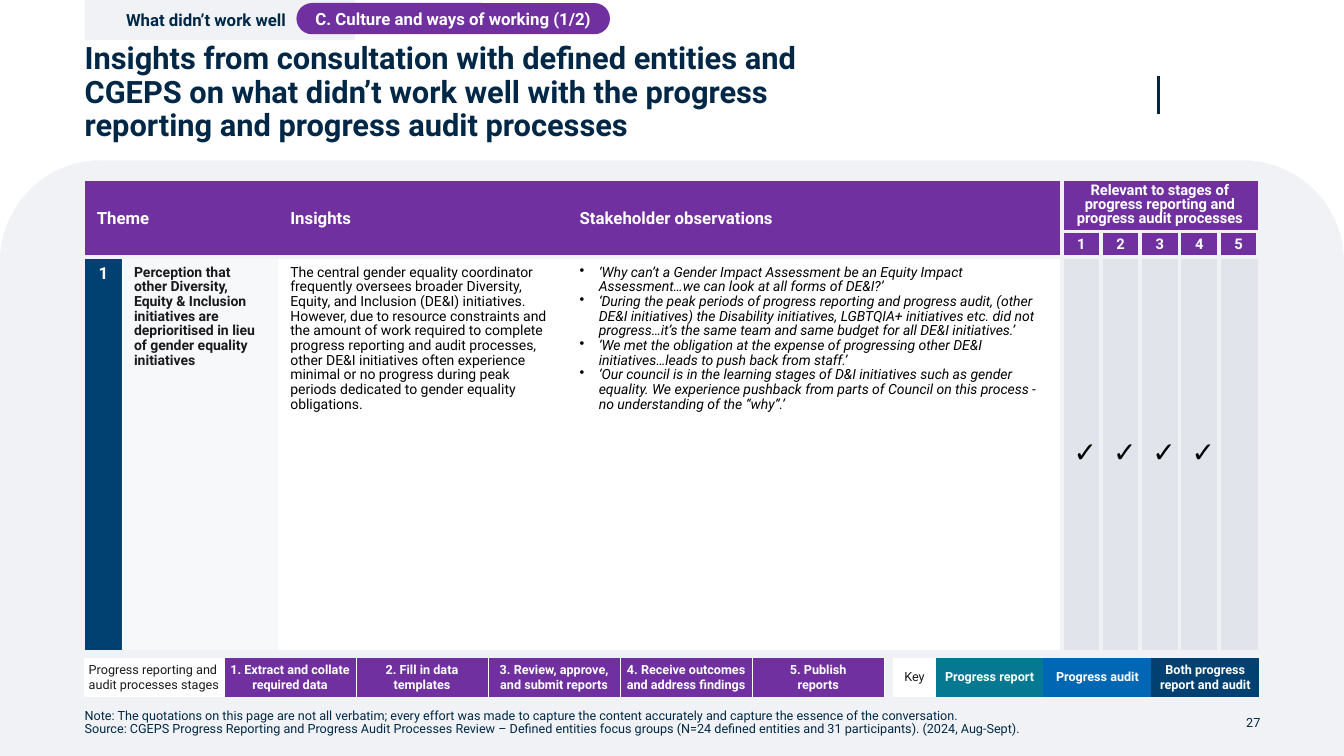
"""Build the slide on what did not work well: culture and ways of working."""
import pptx
import pptx.chart.data
import pptx.dml.color
import pptx.enum.shapes
import pptx.enum.text
import pptx.oxml
import pptx.oxml.ns
import pptx.util
from lxml import etree

Inches, Pt = pptx.util.Inches, pptx.util.Pt
Shape = pptx.enum.shapes.MSO_SHAPE
Align = pptx.enum.text.PP_ALIGN
Anchor = pptx.enum.text.MSO_ANCHOR
qn = pptx.oxml.ns.qn

NAVY, BLUE, PURPLE, PALE = "002846", "004172", "7030A0", "F0F2F5"
WHITE, DARK, BLACK, MIST = "FFFFFF", "1A1A1A", "000000", "E1E5EB"
LEFT = 0.84

TITLE = ("Insights from consultation with defined entities and CGEPS on what didn’t work well "
         "with the progress reporting and progress audit processes")
TAG = "What didn’t work well"
TOPIC = "C. Culture and ways of working (1/2)"
NOTE = ("Note: The quotations on this page are not all verbatim; every effort was made to capture "
        "the content accurately and capture the essence of the conversation.\v"
        "Source: CGEPS Progress Reporting and Progress Audit Processes Review – Defined entities "
        "focus groups (N=24 defined entities and 31 participants). (2024, Aug-Sept).")
PAGE = "27"

HEADS = [(0, "Theme"), (2, "Insights"), (3, "Stakeholder observations")]
STAGES = "Relevant to stages of progress reporting and progress audit processes"
THEME = ("Perception that other Diversity, Equity & Inclusion initiatives are deprioritised "
         "in lieu of gender equality initiatives")
INSIGHT = ("The central gender equality coordinator frequently oversees broader Diversity, Equity, "
           "and Inclusion (DE&I) initiatives. However, due to resource constraints and the amount "
           "of work required to complete progress reporting and audit processes, other DE&I "
           "initiatives often experience minimal or no progress during peak periods dedicated to "
           "gender equality obligations.")
QUOTES = "\n".join([
    "‘Why can’t a Gender Impact Assessment be an Equity Impact Assessment…we can look at all "
    "forms of DE&I?’",
    "‘During the peak periods of progress reporting and progress audit, (other DE&I initiatives) "
    "the Disability initiatives, LGBTQIA+ initiatives etc. did not progress…it’s the same team "
    "and same budget for all DE&I initiatives.’",
    "‘We met the obligation at the expense of progressing other DE&I initiatives…leads to push "
    "back from staff.’",
    "‘Our council is in the learning stages of D&I initiatives such as gender equality. We "
    "experience pushback from parts of Council on this process - no understanding of the “why”.’",
])
TICKS = ["✓", "✓", "✓", "✓", ""]

STEPS = [
    ("Progress reporting and audit processes stages", WHITE),
    ("1. Extract and collate required data", PURPLE),
    ("2. Fill in data\ntemplates", PURPLE),
    ("3. Review, approve, and submit reports", PURPLE),
    ("4. Receive outcomes and address findings", PURPLE),
    ("5. Publish\nreports", PURPLE),
]
KEYS = [("Key", WHITE), ("Progress report", "057992"), ("Progress audit", "0067B4"),
        ("Both progress report and audit", BLUE)]

MID = {"alignment": Align.CENTER}
TIGHT = {"line_spacing": 0.9}


def paint(part, hue):
    part.solid()
    part.fore_color.rgb = pptx.dml.color.RGBColor.from_string(hue)


def apply(part, looks):
    for name, value in looks.items():
        setattr(part, name, value)


def inset(side, top, anchor):
    return {"margin_left": Inches(side), "margin_right": Inches(side),
            "margin_top": Inches(top), "margin_bottom": Inches(top),
            "vertical_anchor": anchor}


def write(frame, text, size, hue, bold=False, para=None, italic=False, mark=None):
    frame.word_wrap = True
    frame.text = text
    for line in frame.paragraphs:
        if mark:
            props = line._p.get_or_add_pPr()
            props.set("marL", str(Inches(0.19)))
            props.set("indent", str(-Inches(0.19)))
            etree.SubElement(props, qn("a:buChar"), char=mark)
        apply(line, para or {})
        apply(line.font, {"size": Pt(size), "name": "Roboto", "bold": bold, "italic": italic})
        paint(line.font.fill, hue)


def edge(cell, sides, hue, width):
    props = cell._tc.get_or_add_tcPr()
    for spot, side in enumerate("LRTB"):
        line = etree.Element(qn("a:ln" + side), w=str(Pt(width)))
        if side in sides:
            fill = etree.SubElement(line, qn("a:solidFill"))
            etree.SubElement(fill, qn("a:srgbClr"), val=hue)
        else:
            etree.SubElement(line, qn("a:noFill"))
        props.insert(spot, line)


def grid(slide, left, top, cols, rows):
    frame = slide.shapes.add_table(len(rows), len(cols), Inches(left), Inches(top),
                                   Inches(sum(cols)), Inches(sum(rows)))
    table = frame.table
    apply(table, {"first_row": False, "horz_banding": False})
    for col, width in zip(table.columns, cols):
        col.width = Inches(width)
    for row, height in zip(table.rows, rows):
        row.height = Inches(height)
    return table


def shape(slide, kind, box, hue):
    item = slide.shapes.add_shape(kind, *map(Inches, box))
    item.shadow.inherit = False
    paint(item.fill, hue)
    item.line.fill.background()
    return item


def label(slide, box, text, para):
    frame = slide.shapes.add_textbox(*map(Inches, box)).text_frame
    apply(frame, inset(0, 0, Anchor.MIDDLE))
    write(frame, text, 9, NAVY, para=para)


def main_table(slide):
    table = grid(slide, LEFT, 1.8, [0.37, 1.55, 2.87, 4.9] + [0.39] * 5, [0.49, 0.24, 3.9])
    for row in range(3):
        for col in range(9):
            cell = table.cell(row, col)
            if row < 2:
                hue = PURPLE
                sides = "B" if col < 3 else "RB" if col == 3 else "LRTB" if row else "LB"
            else:
                hue = BLUE if col == 0 else WHITE if col < 4 else MIST
                sides = "T" if col < 3 else "RT" if col == 3 else "LRT" if col < 8 else "LT"
            paint(cell.fill, hue)
            edge(cell, sides, PALE, 3)
            anchor = Anchor.MIDDLE if row < 2 or col > 3 else Anchor.TOP
            apply(cell, inset(0.12, 0.04 if row < 2 else 0.08, anchor))
    for col, text in HEADS:
        last = 1 if col == 0 else col
        table.cell(0, col).merge(table.cell(1, last))
        write(table.cell(0, col).text_frame, text, 12, WHITE, True, TIGHT)
    table.cell(0, 4).merge(table.cell(0, 8))
    write(table.cell(0, 4).text_frame, STAGES, 10.5, WHITE, True,
          {**MID, "line_spacing": Pt(10)})
    for step, tick in enumerate(TICKS):
        write(table.cell(1, 4 + step).text_frame, str(step + 1), 10.5, WHITE, True,
              {**MID, **TIGHT})
        write(table.cell(2, 4 + step).text_frame, tick, 20, BLACK, False,
              {**MID, **TIGHT}, True)
    write(table.cell(2, 0).text_frame, "1", 12, WHITE, True, {**MID, **TIGHT})
    write(table.cell(2, 1).text_frame, THEME, 10, DARK, True, TIGHT)
    write(table.cell(2, 2).text_frame, INSIGHT, 10, BLACK, False, TIGHT)
    write(table.cell(2, 3).text_frame, QUOTES, 10, BLACK, False, TIGHT, True, "•")
    tint = table.cell(2, 1)._tc.tcPr.find(qn("a:solidFill"))[0]
    etree.SubElement(tint, qn("a:alpha"), val="50000")


def strip(slide, left, cols, items, sides, first):
    table = grid(slide, left, 6.53, cols, [0.38])
    for col, (text, hue) in enumerate(items):
        cell = table.cell(0, col)
        paint(cell.fill, hue)
        edge(cell, sides, WHITE, 0.5)
        apply(cell, inset(0.04, 0.04, Anchor.MIDDLE))
        write(cell.text_frame, text, 9, WHITE if col else DARK, col > 0, MID if col else first)


def main():
    deck = pptx.Presentation()
    apply(deck, {"slide_width": Inches(13.33), "slide_height": Inches(7.5)})
    slide = deck.slides.add_slide(deck.slide_layouts[5])

    panel = shape(slide, Shape.ROUND_2_SAME_RECTANGLE, (0, 1.59, 13.33, 5.91), PALE)
    panel.adjustments[0] = 0.17
    rule = slide.shapes.add_connector(pptx.enum.shapes.MSO_CONNECTOR.STRAIGHT,
                                      *map(Inches, (11.49, 0.75, 11.49, 1.13)))
    paint(rule.line.fill, NAVY)
    rule.line.width = Pt(1.5)
    etree.SubElement(rule._element.spPr, qn("a:effectLst"))

    main_table(slide)

    title = slide.shapes.title
    apply(title, {"left": Inches(LEFT), "top": Inches(0.49),
                  "width": Inches(7.87), "height": Inches(0.87)})
    apply(title.text_frame, inset(0, 0, Anchor.MIDDLE))
    title.text_frame.auto_size = pptx.enum.text.MSO_AUTO_SIZE.NONE
    write(title.text_frame, TITLE, 22, NAVY, True, {**TIGHT, "alignment": Align.LEFT})

    label(slide, (LEFT, 7.03, 10.63, 0.28), NOTE, TIGHT)
    strip(slide, 8.86, [0.42] + [1.07] * 3, KEYS, "", MID)
    strip(slide, LEFT, [1.38] + [1.31] * 5, STEPS, "LR", {})

    tag = shape(slide, Shape.RECTANGLE, (LEFT, 0, 2.68, 0.4), PALE)
    apply(tag.text_frame, {"margin_left": Inches(0.41), "vertical_anchor": Anchor.MIDDLE})
    write(tag.text_frame, TAG, 12, NAVY, True, {"alignment": Align.LEFT})
    pill = shape(slide, Shape.ROUNDED_RECTANGLE, (2.94, 0.03, 3.11, 0.31), PURPLE)
    pill.adjustments[0] = 0.5
    pill.text_frame.vertical_anchor = Anchor.MIDDLE
    write(pill.text_frame, TOPIC, 12, WHITE, True, MID)
    label(slide, (11.71, 7.03, 0.79, 0.28), PAGE, {"alignment": Align.RIGHT})

    deck.save("out.pptx")


if __name__ == "__main__":
    main()
